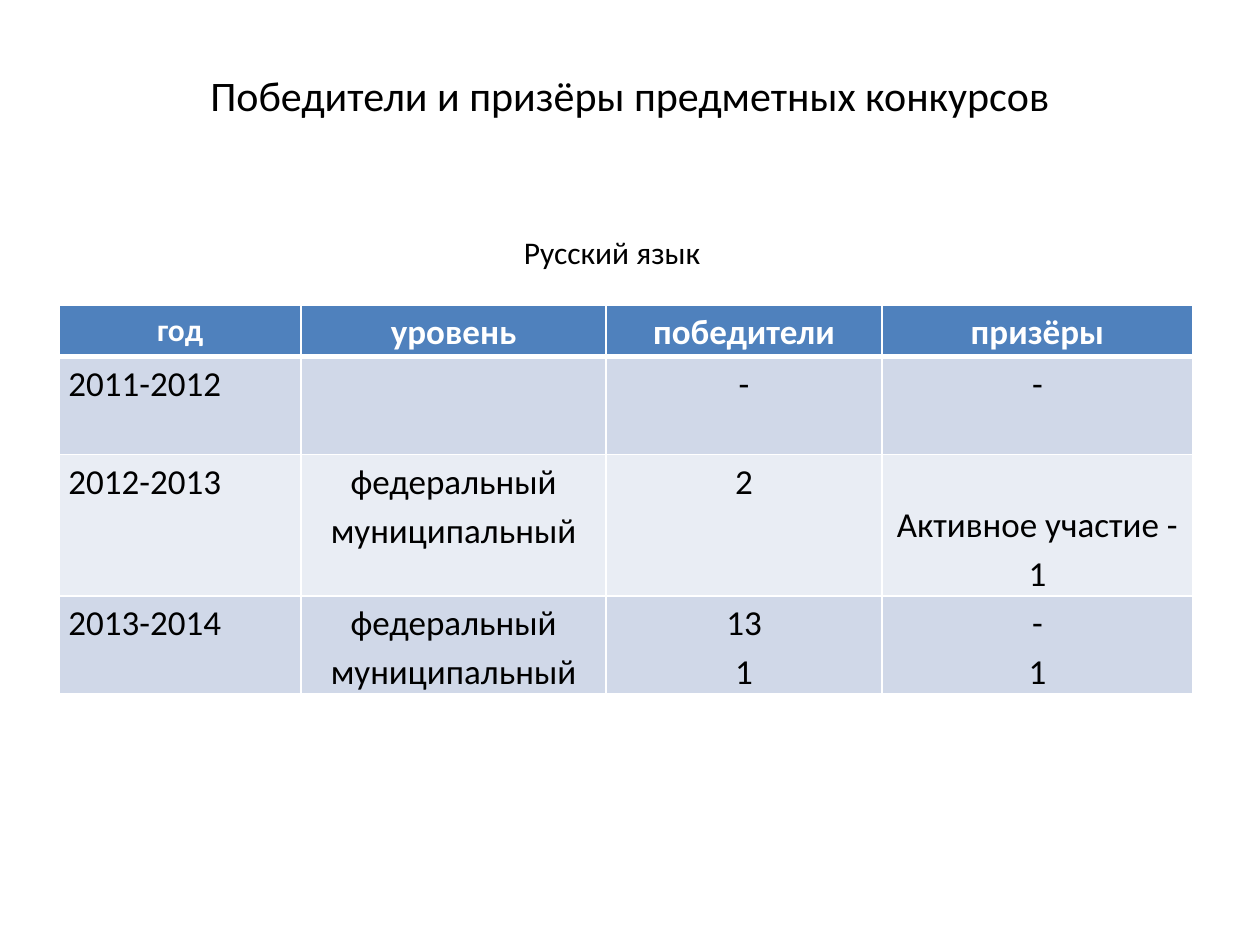
from dataclasses import dataclass

from lxml.etree import SubElement
from pptx import Presentation
from pptx.dml.color import RGBColor
from pptx.enum.text import MSO_ANCHOR as Anchor, PP_ALIGN as Align
from pptx.oxml.ns import qn
from pptx.util import Cm, Pt

FONT = "Calibri"
BLACK, WHITE = "000000", "FFFFFF"
HEADER_FILL, ODD_FILL, EVEN_FILL = "4F81BD", "D0D8E8", "E9EDF4"
COLUMN_WIDTHS = (4.88, 6.15, 5.56, 6.27)
THIN, THICK = 1, 3


@dataclass
class Row:
    height: float
    fill: str
    texts: tuple[str, ...]


ROWS = (
    Row(1.04, HEADER_FILL, ("год", "уровень", "победители", "призёры")),
    Row(1.97, ODD_FILL, ("2011-2012", "", "-", "-")),
    Row(2.85, EVEN_FILL, ("2012-2013", "федеральный\nмуниципальный", "2", "Активное участие - 1")),
    Row(1.97, ODD_FILL, ("2013-2014", "федеральный\nмуниципальный", "13\n1", "-\n1")),
)


def rgb(value: str) -> RGBColor:
    return RGBColor.from_string(value)


def write(frame, text: str, *, size: float, color: str = BLACK, bold: bool = False,
          align: Align = Align.CENTER, spacing: float = 1.0) -> None:
    frame.word_wrap = True
    for index, line in enumerate(text.split("\n")):
        para = frame.add_paragraph() if index else frame.paragraphs[0]
        para.alignment, para.line_spacing = align, spacing
        para.font.size = Pt(size)
        if line:
            span = para.add_run()
            span.text = line
            span.font.name, span.font.size, span.font.bold = FONT, Pt(size), bold
            span.font.color.rgb = rgb(color)


def add_text(page, left: float, top: float, width: float, height: float, text: str, **style):
    box = page.shapes.add_textbox(Cm(left), Cm(top), Cm(width), Cm(height))
    write(box.text_frame, text, **style)
    return box


def set_borders(cell, **widths: float) -> None:
    """Draw white cell edges; keys are L, R, T, B and widths are points."""
    properties = cell._tc.get_or_add_tcPr()
    for side, width in widths.items():
        line = SubElement(properties, qn(f"a:ln{side}"), w=str(Pt(width)))
        fill = SubElement(line, qn("a:solidFill"))
        SubElement(fill, qn("a:srgbClr"), val=WHITE)


def add_results(page) -> None:
    frame = page.shapes.add_table(len(ROWS), len(COLUMN_WIDTHS), Cm(1.19), Cm(6.15),
                                  Cm(sum(COLUMN_WIDTHS)), Cm(sum(row.height for row in ROWS)))
    table = frame.table
    for column, width in zip(table.columns, COLUMN_WIDTHS):
        column.width = Cm(width)
    for r, row in enumerate(ROWS):
        table.rows[r].height = Cm(row.height)
        header = r == 0
        for c, text in enumerate(row.texts):
            cell = table.cell(r, c)
            set_borders(cell, L=THIN, R=THIN, T=THICK if r == 1 else THIN,
                        B=THICK if header else THIN)
            cell.fill.solid()
            cell.fill.fore_color.rgb = rgb(row.fill)
            corner = header and c == 0
            if not corner:
                cell.margin_left = cell.margin_right = Cm(0.19)
                cell.margin_top = cell.margin_bottom = 0
            write(cell.text_frame, text, size=18 if corner else 20, bold=header,
                  color=WHITE if header else BLACK, spacing=1.0 if corner else 1.15,
                  align=Align.LEFT if c == 0 and not header else Align.CENTER)
    table.cell(2, 3).margin_top = Cm(0.87)


def main() -> None:
    deck = Presentation()
    deck.slide_width, deck.slide_height = Cm(25.4), Cm(19.05)
    page = deck.slides.add_slide(deck.slide_layouts[6])
    title = add_text(page, 1.27, 0.76, 22.86, 3.18,
                     "Победители и призёры предметных конкурсов", size=24)
    title.text_frame.vertical_anchor = Anchor.MIDDLE
    title.text_frame.margin_bottom = Cm(1)
    add_results(page)
    add_text(page, 10.31, 4.57, 5.77, 1.02, "Русский язык", size=18, align=Align.LEFT)
    deck.save("out.pptx")


if __name__ == "__main__":
    main()
